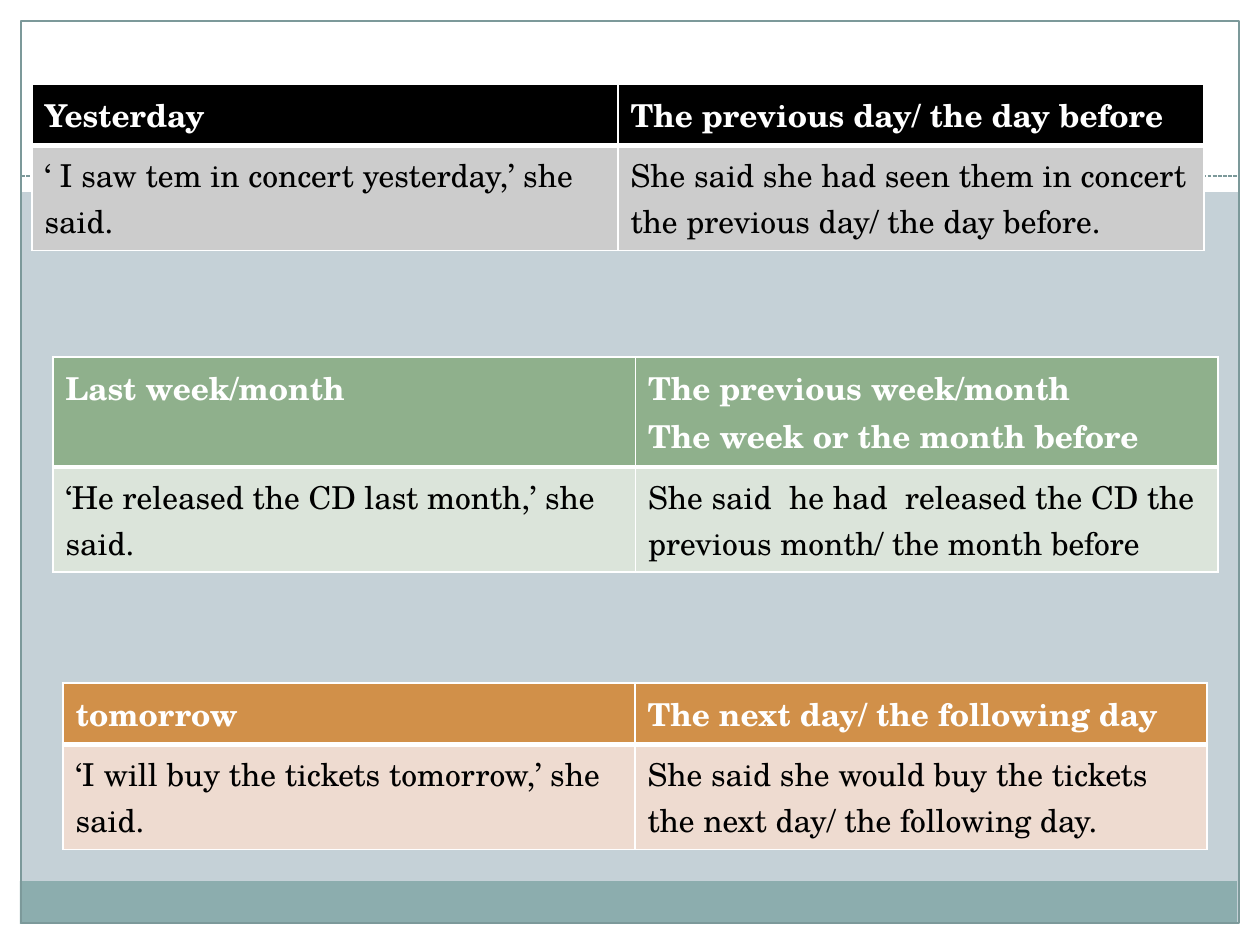
import pptx
import pptx.util
import pptx.dml.color
import pptx.enum.dml
import pptx.enum.shapes
from lxml import etree
from pptx.oxml.ns import qn

RGBColor = pptx.dml.color.RGBColor
WHITE = RGBColor(0xFF, 0xFF, 0xFF)
BLACK = RGBColor(0x00, 0x00, 0x00)
GROUND = RGBColor(0xC5, 0xD1, 0xD7)
TEAL = RGBColor(0x8C, 0xAD, 0xAE)
EDGE = RGBColor(0x7C, 0x99, 0x9A)
GREY = RGBColor(0xCC, 0xCC, 0xCC)
GREEN = RGBColor(0x8F, 0xB0, 0x8C)
PALE_GREEN = RGBColor(0xDB, 0xE4, 0xDA)
ORANGE = RGBColor(0xD1, 0x90, 0x49)
PALE_ORANGE = RGBColor(0xEE, 0xDB, 0xD0)

FONT = "TeX Gyre Schola"
WIDTH, HEIGHT = 1260, 945
ROW_HEIGHT = 52

# Place, header fill, body fill, then rows of cells; a cell is a list of paragraphs
TABLES = [
    ((32, 84, 1172, 140), BLACK, GREY, [
        [["Yesterday"], ["The previous day/ the day before"]],
        [["‘ I saw tem in concert yesterday,’ she said."],
         ["She said she had seen them in concert the previous day/ the day before."]],
    ]),
    ((53, 357, 1165, 176), GREEN, PALE_GREEN, [
        [["Last week/month"],
         ["The previous week/month", "The week or the month before"]],
        [["‘He released the CD last month,’ she said."],
         ["She said  he had  released the CD the previous month/ the month before"]],
    ]),
    ((63, 683, 1144, 140), ORANGE, PALE_ORANGE, [
        [["tomorrow"], ["The next day/ the following day"]],
        [["‘I will buy the tickets tomorrow,’ she said."],
         ["She said she would buy the tickets the next day/ the following day."]],
    ]),
]


def px(length):
    return pptx.util.Emu(length * 914400 // 126)


def add_rectangle(page, place, fill=None, line=None):
    shape = page.shapes.add_shape(
        pptx.enum.shapes.MSO_SHAPE.RECTANGLE, *map(px, place))
    shape.shadow.inherit = False
    if fill is None:
        shape.fill.background()
    else:
        shape.fill.solid()
        shape.fill.fore_color.rgb = fill
    if line is None:
        shape.line.fill.background()
    else:
        shape.line.color.rgb = line
        shape.line.width = pptx.util.Pt(0.75)


def add_dashed_line(page, left, right, y):
    line = page.shapes.add_connector(
        pptx.enum.shapes.MSO_CONNECTOR.STRAIGHT, px(left), px(y), px(right), px(y))
    line.line.color.rgb = EDGE
    line.line.width = pptx.util.Pt(0.75)
    line.line.dash_style = pptx.enum.dml.MSO_LINE.SQUARE_DOT
    etree.SubElement(line._element.spPr, qn("a:effectLst"))


def set_borders(cell, top, bottom):
    properties = cell._tc.get_or_add_tcPr()
    sides = [("a:lnL", 1), ("a:lnR", 1), ("a:lnT", top), ("a:lnB", bottom)]
    for index, (side, points) in enumerate(sides):
        border = etree.Element(qn(side), w=str(pptx.util.Pt(points)))
        fill = etree.SubElement(border, qn("a:solidFill"))
        etree.SubElement(fill, qn("a:srgbClr"), val=str(WHITE))
        properties.insert(index, border)


def fill_cell(cell, paragraphs, fill, header):
    cell.fill.solid()
    cell.fill.fore_color.rgb = fill
    set_borders(cell, top=1 if header else 3, bottom=3 if header else 1)
    for index, text in enumerate(paragraphs):
        frame = cell.text_frame
        para = frame.add_paragraph() if index else frame.paragraphs[0]
        span = para.add_run()
        span.text = text
        span.font.name = FONT
        span.font.size = pptx.util.Pt(18)
        span.font.bold = header
        span.font.color.rgb = WHITE if header else BLACK


def add_phrase_table(page, place, header_fill, body_fill, rows):
    frame = page.shapes.add_table(len(rows), len(rows[0]), *map(px, place))
    table = frame.table
    for row_index, row in enumerate(rows):
        header = row_index == 0
        table.rows[row_index].height = px(ROW_HEIGHT)
        for column_index, paragraphs in enumerate(row):
            fill_cell(table.cell(row_index, column_index), paragraphs,
                      header_fill if header else body_fill, header)
    frame.height = px(place[3])


def main():
    deck = pptx.Presentation()
    deck.slide_width, deck.slide_height = px(WIDTH), px(HEIGHT)
    page = deck.slides.add_slide(deck.slide_layouts[6])
    page.background.fill.solid()
    page.background.fill.fore_color.rgb = GROUND

    # White margins and top band
    for place in [(0, 924, WIDTH, 21), (0, 0, WIDTH, 192),
                  (0, 0, 21, HEIGHT), (1239, 0, 21, HEIGHT)]:
        add_rectangle(page, place, fill=WHITE)

    # Footer bar, frame and dashed rule
    add_rectangle(page, (20, 881, 1217, 43), fill=TEAL)
    add_rectangle(page, (21, 21, 1218, 902), line=EDGE)
    add_dashed_line(page, 21, 1239, 176)

    # Direct and reported speech
    for place, header_fill, body_fill, rows in TABLES:
        add_phrase_table(page, place, header_fill, body_fill, rows)

    deck.save("out.pptx")


if __name__ == "__main__":
    main()
